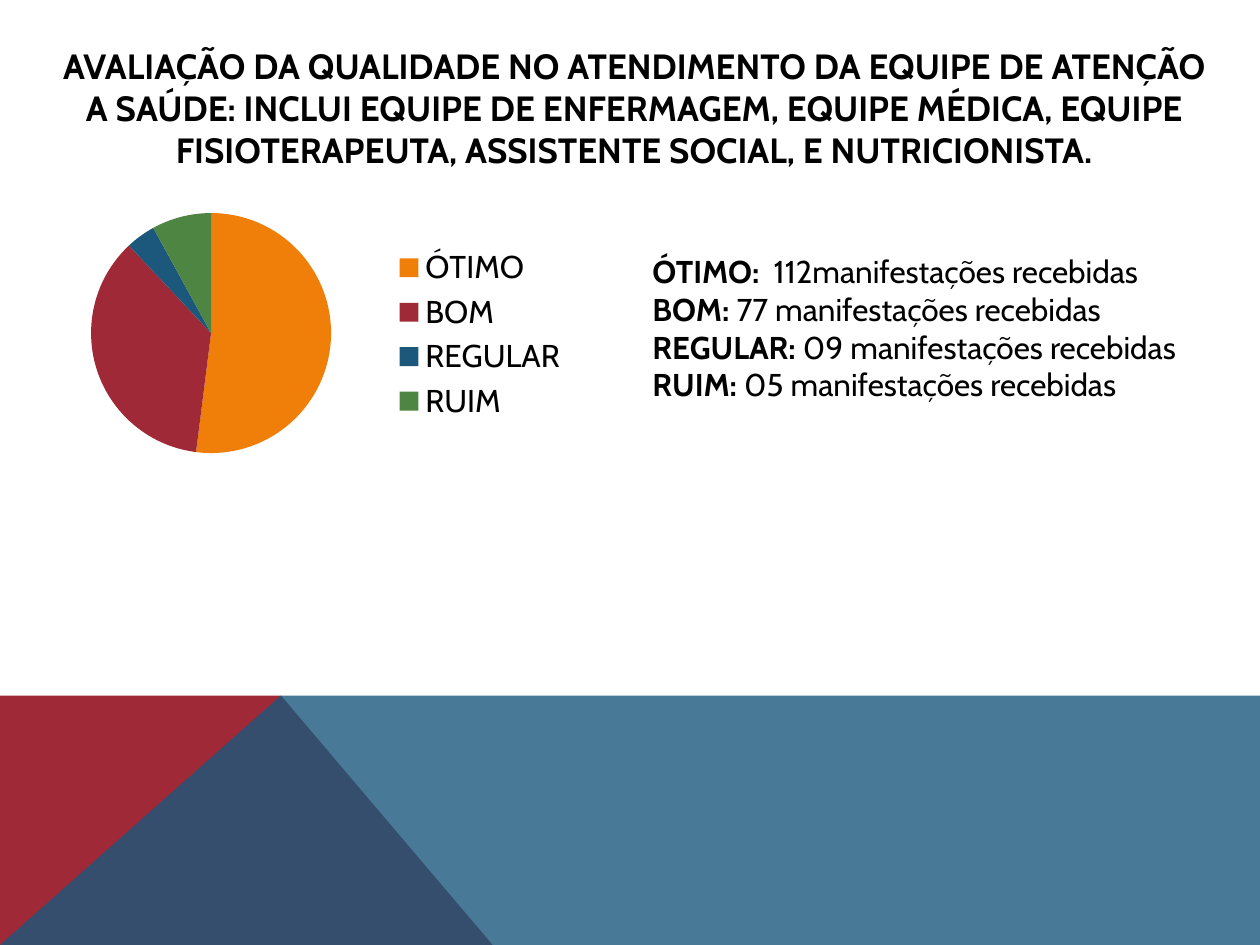
"""Build the care team quality assessment slide with a pie chart and its counts."""
from lxml import etree
from pptx import Presentation
from pptx.chart.data import CategoryChartData
from pptx.dml.color import RGBColor
from pptx.enum.chart import XL_CHART_TYPE, XL_LEGEND_POSITION
from pptx.enum.text import MSO_ANCHOR, MSO_AUTO_SIZE, PP_ALIGN
from pptx.oxml.ns import qn
from pptx.util import Inches, Pt

PIE = XL_CHART_TYPE.PIE
RIGHT = XL_LEGEND_POSITION.RIGHT
MIDDLE = MSO_ANCHOR.MIDDLE
NO_FIT, GROW = MSO_AUTO_SIZE.NONE, MSO_AUTO_SIZE.SHAPE_TO_FIT_TEXT
CENTER = PP_ALIGN.CENTER

WIDTH, HEIGHT = 10, 7.5
FONT, BLACK = "Cabin", "000000"
TITLE = (
    "AVALIAÇÃO DA QUALIDADE NO ATENDIMENTO DA EQUIPE DE ATENÇÃO A SAÚDE: "
    "INCLUI EQUIPE DE ENFERMAGEM, EQUIPE MÉDICA, EQUIPE FISIOTERAPEUTA, "
    "ASSISTENTE SOCIAL, E NUTRICIONISTA."
)
RATINGS = [
    ("ÓTIMO", 52, "F07F09"),
    ("BOM", 36, "9F2936"),
    ("REGULAR", 4, "1B587C"),
    ("RUIM", 8, "4E8542"),
]
COUNTS = [
    ("ÓTIMO:  ", "112manifestações recebidas"),
    ("BOM: ", "77 manifestações recebidas"),
    ("REGULAR: ", "09 manifestações recebidas"),
    ("RUIM: ", "05 manifestações recebidas"),
]
BAND_TOP, PEAK, FOOT = 5.52, 2.23, 3.91
BANDS = [
    ([(0, HEIGHT), (0, BAND_TOP), (PEAK, BAND_TOP), (FOOT, HEIGHT)], "9F2936", 100),
    ([(0, HEIGHT), (PEAK, BAND_TOP), (WIDTH, BAND_TOP), (WIDTH, HEIGHT)], "1B587C", 80),
]
TITLE_AREA = (0.31, 0.31, 9.45, 1.09)
COUNTS_AREA = (5.08, 1.95, 4.45, 1.62)
CHART_AREA = (0.23, 1.56, 4.38, 2.19)
PIE_SHARE = {"x": 0.11, "y": 0.06, "w": 0.44, "h": 0.87}


def color(value):
    return RGBColor.from_string(value)


def inches(area):
    return [Inches(length) for length in area]


def style(font, size, bold=False):
    font.name, font.size, font.bold = FONT, Pt(size), bold
    font.color.rgb = color(BLACK)


def add_band(slide, points, fill, opacity):
    builder = slide.shapes.build_freeform(*inches(points[0]), scale=1.0)
    builder.add_line_segments([inches(point) for point in points[1:]], close=True)
    band = builder.convert_to_shape()
    band.shadow.inherit = False
    band.fill.solid()
    band.fill.fore_color.rgb = color(fill)
    band.line.fill.background()
    if opacity < 100:
        tint = band.fill._xPr.find(".//" + qn("a:srgbClr"))
        etree.SubElement(tint, qn("a:alpha"), val=str(opacity * 1000))


def set_title(slide):
    title = slide.shapes.title
    title.left, title.top, title.width, title.height = inches(TITLE_AREA)
    frame = title.text_frame
    frame.text = TITLE
    frame.auto_size, frame.vertical_anchor = NO_FIT, MIDDLE
    frame.paragraphs[0].alignment = CENTER
    style(frame.paragraphs[0].runs[0].font, 20, True)


def add_counts(slide):
    frame = slide.shapes.add_textbox(*inches(COUNTS_AREA)).text_frame
    frame.word_wrap, frame.auto_size = True, GROW
    for index, texts in enumerate(COUNTS):
        para = frame.add_paragraph() if index else frame.paragraphs[0]
        for text, bold in zip(texts, (True, False)):
            span = para.add_run()
            span.text = text
            style(span.font, 18, bold)


def add_pie(slide):
    data = CategoryChartData()
    data.categories = [name for name, _, _ in RATINGS]
    data.add_series("Series 1", [share for _, share, _ in RATINGS])
    chart = slide.shapes.add_chart(PIE, *inches(CHART_AREA), data).chart
    style(chart.font, 18)
    chart.has_title = False
    chart.has_legend = True
    chart.legend.position, chart.legend.include_in_layout = RIGHT, True
    plot = chart.plots[0]
    plot.vary_by_categories = True
    for index, (_, _, fill) in enumerate(RATINGS):
        slice_fill = plot.series[0].points[index].format.fill
        slice_fill.solid()
        slice_fill.fore_color.rgb = color(fill)
    area = chart._chartSpace.find(".//" + qn("c:plotArea"))
    layout = area.find(qn("c:layout"))
    if layout is None:
        layout = etree.Element(qn("c:layout"))
        area.insert(0, layout)
    manual = etree.SubElement(layout, qn("c:manualLayout"))
    etree.SubElement(manual, qn("c:layoutTarget"), val="inner")
    for side in "xy":
        etree.SubElement(manual, qn(f"c:{side}Mode"), val="edge")
    for side, share in PIE_SHARE.items():
        etree.SubElement(manual, qn(f"c:{side}"), val=str(share))


def main():
    deck = Presentation()
    deck.slide_width, deck.slide_height = inches((WIDTH, HEIGHT))
    slide = deck.slides.add_slide(deck.slide_layouts[5])
    for band in BANDS:
        add_band(slide, *band)
    set_title(slide)
    add_counts(slide)
    add_pie(slide)
    deck.save("out.pptx")


if __name__ == "__main__":
    main()
